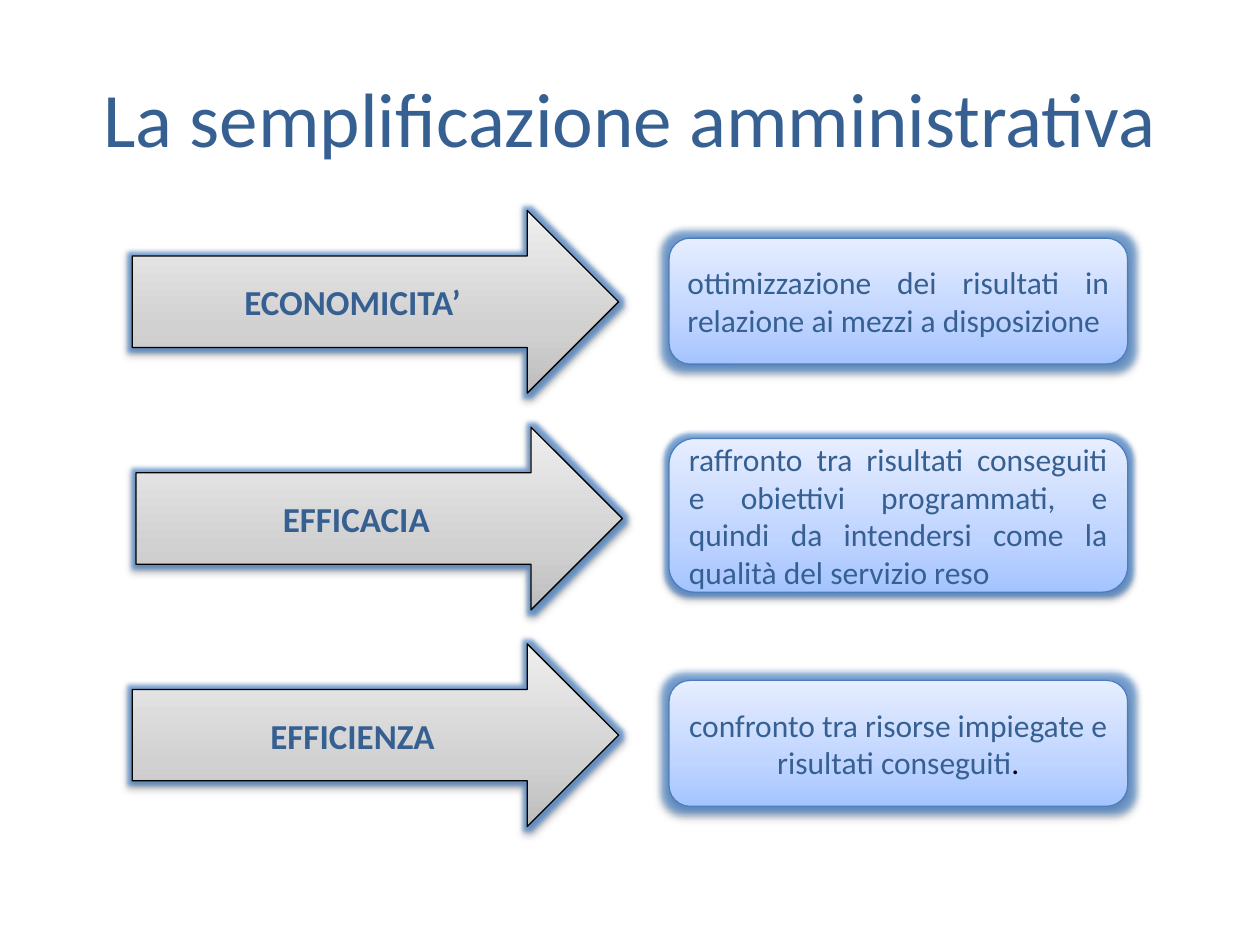
from copy import deepcopy
from lxml import etree
from pptx import Presentation
from pptx.dml.color import RGBColor
from pptx.enum.shapes import MSO_SHAPE
from pptx.enum.text import MSO_ANCHOR, PP_ALIGN
from pptx.oxml.ns import qn
from pptx.util import Inches, Pt

ARROW, ROUND = MSO_SHAPE.RIGHT_ARROW, MSO_SHAPE.ROUNDED_RECTANGLE
MIDDLE = MSO_ANCHOR.MIDDLE
CENTER, JUSTIFY = PP_ALIGN.CENTER, PP_ALIGN.JUSTIFY
INK = {
    "text": "376092", "black": "000000", "edge": "4B7EBC", "glow": "3A7CCB",
    "gray": ("BDBDBD", "D1D1D1", "EEEEEE"),
    "blue": ("A4C4FF", "BFD4FF", "E6EEFF"),
}


def write(shape, text, size=18, bold=False, align=CENTER, tail=""):
    frame = shape.text_frame
    frame.word_wrap = True
    frame.vertical_anchor = MIDDLE
    para = frame.paragraphs[0]
    para.alignment = align
    for part, ink in ((text, "text"), (tail, "black")):
        if part:
            run = para.add_run()
            run.text = part
            font = run.font
            font.name, font.size, font.bold = "Calibri", Pt(size), bold
            font.color.rgb = RGBColor.from_string(INK[ink])


def block(kind, left, top, wide, high, tint, edge, glow):
    shape = slide.shapes.add_shape(
        kind, Inches(left), Inches(top), Inches(wide), Inches(high))
    fill = shape.fill
    fill.gradient()
    fill.gradient_angle = 90
    stops = shape._element.spPr.find(".//" + qn("a:gsLst"))
    stops.insert(1, deepcopy(stops[0]))
    for stop, spot, ink in zip(fill.gradient_stops, (0, 0.35, 1), INK[tint]):
        stop.position = spot
        stop.color.rgb = RGBColor.from_string(ink)
    shape.line.color.rgb = RGBColor.from_string(INK[edge])
    shape.line.width = Pt(0.75)
    shape.shadow.inherit = False
    effects = shape._element.spPr.find(qn("a:effectLst"))
    for tag, attrs, ink, alpha in (
        ("glow", {"rad": Pt(glow)}, "glow", 60),
        ("outerShdw", {"blurRad": Pt(3.1), "dist": Pt(1.6), "dir": 5400000,
                       "rotWithShape": 0}, "black", 38),
    ):
        node = etree.SubElement(effects, qn("a:" + tag))
        for key, value in attrs.items():
            node.set(key, str(int(value)))
        color = etree.SubElement(node, qn("a:srgbClr"), val=INK[ink])
        etree.SubElement(color, qn("a:alpha"), val=str(alpha * 1000))
    return shape


deck = Presentation()
deck.slide_width, deck.slide_height = Inches(10), Inches(7.5)
slide = deck.slides.add_slide(deck.slide_layouts[6])

title = slide.shapes.add_textbox(Inches(0.5), Inches(0.3), Inches(9), Inches(1.25))
write(title, "La semplificazione amministrativa", size=44)

FIRST, STEP = 1.67, 1.72
rows = (
    ("ECONOMICITA’", 1.05, 1.89, 1, 8, JUSTIFY,
     "ottimizzazione dei risultati in relazione ai mezzi a disposizione", ""),
    ("EFFICACIA", 1.08, 3.48, 1.22, 5, JUSTIFY,
     "raffronto tra risultati conseguiti e obiettivi programmati, e quindi "
     "da intendersi come la qualità del servizio reso", ""),
    ("EFFICIENZA", 1.05, 5.4, 1, 8, CENTER,
     "confronto tra risorse impiegate e risultati conseguiti", "."),
)
for row, (name, left, top, high, glow, align, text, tail) in enumerate(rows):
    arrow = block(ARROW, left, FIRST + row * STEP, 3.86, 1.45, "gray", "black", 5)
    write(arrow, name, size=20, bold=True)
    box = block(ROUND, 5.31, top, 3.64, high, "blue", "edge", glow)
    write(box, text, align=align, tail=tail)

deck.save("out.pptx")
